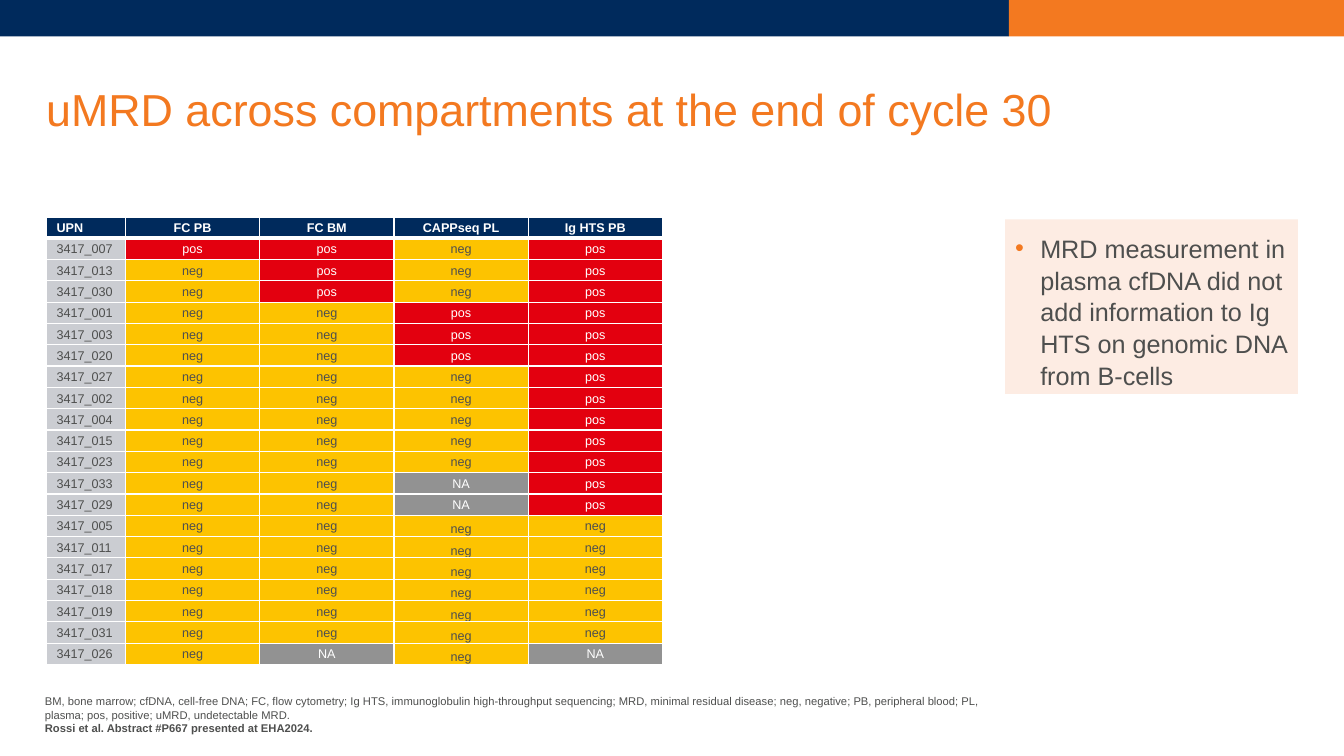
from lxml.etree import SubElement
from pptx import Presentation
from pptx.dml.color import RGBColor
from pptx.enum.shapes import MSO_SHAPE
from pptx.enum.text import MSO_ANCHOR, PP_ALIGN
from pptx.oxml.ns import qn
from pptx.util import Pt

NAVY = RGBColor(0x00, 0x2A, 0x5C)
ORANGE = RGBColor(0xF3, 0x79, 0x20)
PEACH = RGBColor(0xFD, 0xEC, 0xE3)
DARK_GREY = RGBColor(0x4E, 0x4F, 0x4E)
MID_GREY = RGBColor(0x92, 0x92, 0x92)
LIGHT_GREY = RGBColor(0xCB, 0xCD, 0xD2)
RED = RGBColor(0xE3, 0x00, 0x0F)
YELLOW = RGBColor(0xFD, 0xC3, 0x00)
WHITE = RGBColor(0xFF, 0xFF, 0xFF)

RESULT_COLOURS = {"pos": (RED, WHITE), "neg": (YELLOW, DARK_GREY), "NA": (MID_GREY, WHITE)}
HEADERS = ["UPN", "FC PB", "FC BM", "CAPPseq PL", "Ig HTS PB"]
PATIENTS_BY_RESULTS = [
    ("007", "pos pos neg pos"),
    ("013 030", "neg pos neg pos"),
    ("001 003 020", "neg neg pos pos"),
    ("027 002 004 015 023", "neg neg neg pos"),
    ("033 029", "neg neg NA pos"),
    ("005 011 017 018 019 031", "neg neg neg neg"),
    ("026", "neg NA neg NA"),
]
PLASMA_COLUMN = 3
FIRST_TIGHT_ROW = 14
TITLE = "uMRD across compartments at the end of cycle 30"
MESSAGE = ("MRD measurement in plasma cfDNA did not add information to Ig HTS "
           "on genomic DNA from B-cells")
ABBREVIATIONS = (
    "BM, bone marrow; cfDNA, cell-free DNA; FC, flow cytometry; Ig HTS, immunoglobulin "
    "high-throughput sequencing; MRD, minimal residual disease; neg, negative; PB, peripheral "
    "blood; PL, plasma; pos, positive; uMRD, undetectable MRD.")
CITATION = "Rossi et al. Abstract #P667 presented at EHA2024."


class SlideBuilder:
    """Hold the font and the current slide, and add styled elements to it."""

    def __init__(self, slide, font_name="Arial"):
        self.slide = slide
        self.font_name = font_name

    def style(self, paragraph, size, colour, bold=False):
        font = paragraph.font
        font.name, font.size, font.bold = self.font_name, Pt(size), bold
        font.color.rgb = colour

    def rectangle(self, left, top, width, height, colour):
        shape = self.slide.shapes.add_shape(
            MSO_SHAPE.RECTANGLE, Pt(left), Pt(top), Pt(width), Pt(height))
        shape.shadow.inherit = False
        shape.fill.solid()
        shape.fill.fore_color.rgb = colour
        shape.line.fill.background()
        return shape

    def text(self, left, top, width, height, lines, size, colour, spacing=1.0):
        box = self.slide.shapes.add_textbox(Pt(left), Pt(top), Pt(width), Pt(height))
        frame = box.text_frame
        frame.word_wrap = True
        frame.vertical_anchor = MSO_ANCHOR.BOTTOM
        frame.margin_left = frame.margin_right = frame.margin_top = frame.margin_bottom = 0
        frame.text = "\n".join(line for line, bold in lines)
        for paragraph, (line, bold) in zip(frame.paragraphs, lines):
            paragraph.line_spacing = spacing
            self.style(paragraph, size, colour, bold)

    def bullet_box(self, left, top, width, height, text):
        frame = self.rectangle(left, top, width, height, PEACH).text_frame
        frame.word_wrap = True
        frame.vertical_anchor = MSO_ANCHOR.TOP
        frame.margin_left = frame.margin_right = Pt(7.2)
        frame.margin_top, frame.margin_bottom = Pt(8.64), Pt(3.6)
        frame.text = text
        paragraph = frame.paragraphs[0]
        properties = paragraph._p.get_or_add_pPr()
        properties.set("marL", str(Pt(18)))
        properties.set("indent", str(Pt(-18)))
        bullet_colour = SubElement(properties, qn("a:buClr"))
        SubElement(bullet_colour, qn("a:srgbClr"), val=str(ORANGE))
        SubElement(properties, qn("a:buFont"), typeface=self.font_name)
        SubElement(properties, qn("a:buChar"), char="•")
        paragraph.alignment = PP_ALIGN.LEFT
        paragraph.line_spacing = 1.05
        self.style(paragraph, 18, DARK_GREY)

    def borders(self, cell, top, bottom):
        properties = cell._tc.get_or_add_tcPr()
        for side, width in (("L", 1), ("R", 1), ("T", top), ("B", bottom)):
            line = SubElement(properties, qn(f"a:ln{side}"), w=str(Pt(width)))
            fill = SubElement(line, qn("a:solidFill"))
            SubElement(fill, qn("a:srgbClr"), val=str(WHITE))

    def cell(self, cell, text, fill, colour, centred, bold=False, padding=2.16):
        cell.text = text
        cell.vertical_anchor = MSO_ANCHOR.BOTTOM
        cell.margin_left = cell.margin_right = Pt(7.2)
        cell.margin_top = cell.margin_bottom = Pt(padding)
        cell.fill.solid()
        cell.fill.fore_color.rgb = fill
        paragraph = cell.text_frame.paragraphs[0]
        paragraph.alignment = PP_ALIGN.CENTER if centred else PP_ALIGN.LEFT
        self.style(paragraph, 9, colour, bold)

    def results_table(self, left, top, column_widths, header_height, row_height, rows):
        height = header_height + row_height * len(rows)
        table = self.slide.shapes.add_table(
            len(rows) + 1, len(column_widths), Pt(left), Pt(top),
            Pt(sum(column_widths)), Pt(height)).table
        for column, width in zip(table.columns, column_widths):
            column.width = Pt(width)
        for row_index, values in enumerate([HEADERS] + rows):
            is_header = row_index == 0
            table.rows[row_index].height = Pt(header_height if is_header else row_height)
            for column_index, value in enumerate(values):
                cell = table.cell(row_index, column_index)
                self.borders(cell, 3 if row_index == 1 else 1, 3 if is_header else 1)
                fill, colour = RESULT_COLOURS.get(value, (LIGHT_GREY, DARK_GREY))
                if is_header:
                    fill, colour = NAVY, WHITE
                is_tight = column_index == PLASMA_COLUMN and row_index >= FIRST_TIGHT_ROW
                self.cell(cell, value, fill, colour, column_index > 0, is_header,
                          0 if is_tight else 2.16)


def main():
    presentation = Presentation()
    presentation.slide_width, presentation.slide_height = Pt(960), Pt(540)
    builder = SlideBuilder(presentation.slides.add_slide(presentation.slide_layouts[6]))
    builder.rectangle(0, 0, 720.75, 26, NAVY)
    builder.rectangle(720.75, 0, 239.25, 26, ORANGE)
    builder.text(33, 45.4, 895, 51.8, [(TITLE, False)], 32, ORANGE, 0.9)
    builder.text(32, 494.6, 672, 30.2, [(ABBREVIATIONS, False), (CITATION, True)], 8, DARK_GREY)
    rows = [[f"3417_{patient}"] + results.split()
            for patients, results in PATIENTS_BY_RESULTS for patient in patients.split()]
    builder.results_table(33.2, 155, [56.4] + [95.9] * 4, 14.7, 15.25, rows)
    builder.bullet_box(718, 156.8, 209.2, 124.6, MESSAGE)
    presentation.save("out.pptx")


if __name__ == "__main__":
    main()
